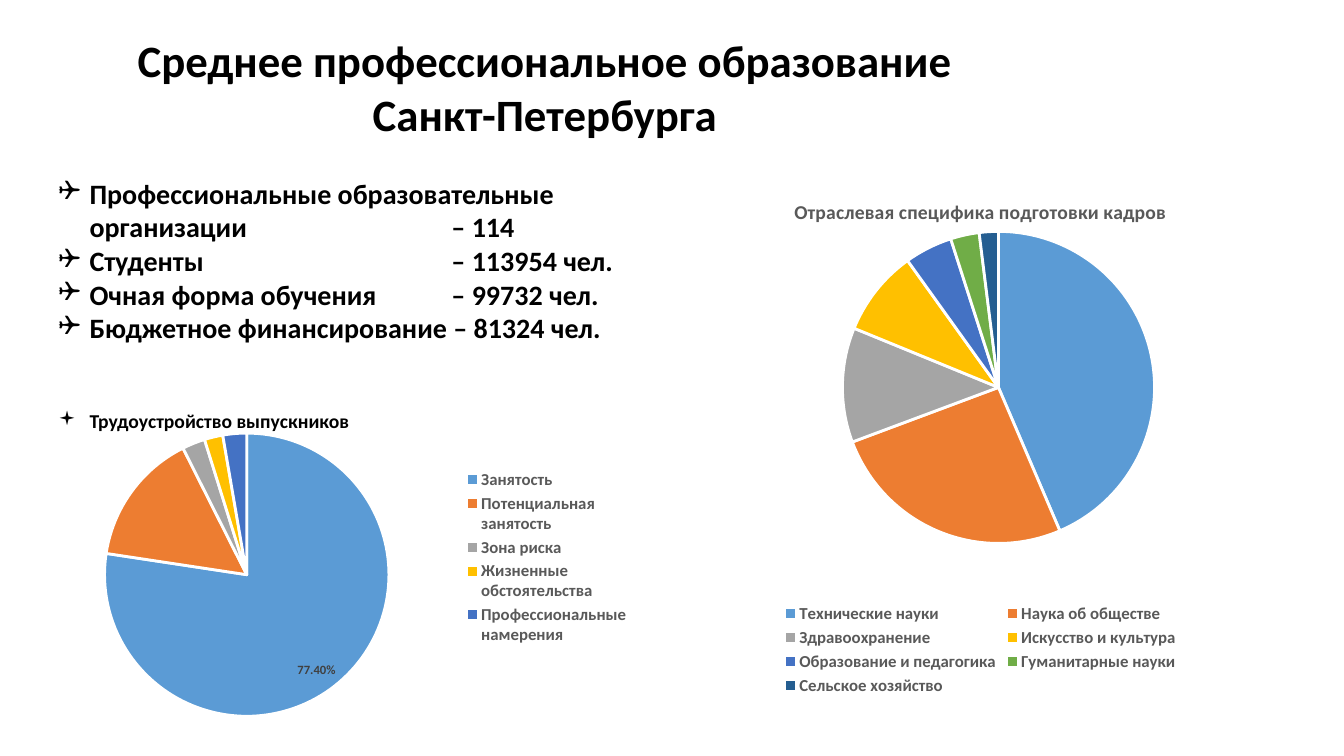
from lxml import etree
from pptx import Presentation
from pptx.chart.data import CategoryChartData
from pptx.dml.color import RGBColor
from pptx.enum.chart import XL_CHART_TYPE, XL_LABEL_POSITION, XL_LEGEND_POSITION
from pptx.enum.shapes import MSO_SHAPE
from pptx.enum.text import MSO_ANCHOR, PP_ALIGN
from pptx.oxml import parse_xml
from pptx.oxml.ns import nsdecls, qn
from pptx.util import Inches, Pt

PIE = XL_CHART_TYPE.PIE
BOTTOM, RIGHT = XL_LEGEND_POSITION.BOTTOM, XL_LEGEND_POSITION.RIGHT
INSIDE = XL_LABEL_POSITION.INSIDE_END
RECT = MSO_SHAPE.RECTANGLE
TOP, MIDDLE = MSO_ANCHOR.TOP, MSO_ANCHOR.MIDDLE
CENTER, JUSTIFY = PP_ALIGN.CENTER, PP_ALIGN.JUSTIFY

FONT = "Calibri"
COLORS = {
    "black": "000000", "white": "FFFFFF", "grey": "595959", "label": "404040",
    "blue": "5B9BD5", "orange": "ED7D31", "silver": "A5A5A5", "gold": "FFC000",
    "royal": "4472C4", "green": "70AD47", "navy": "255E91",
}
SLICES = ["blue", "orange", "silver", "gold", "royal", "green", "navy"]

TITLE = ["Среднее профессиональное образование", "Санкт-Петербурга"]
FACTS = [
    "Профессиональные образовательные организации\t– 114",
    "Студенты\t– 113954 чел.",
    "Очная форма обучения\t– 99732 чел.",
    "Бюджетное финансирование – 81324 чел.",
]
NOTE = "Трудоустройство выпускников"
FIELDS = [
    ("Технические науки", 44), ("Наука об обществе", 26),
    ("Здравоохранение", 12), ("Искусство и культура", 9),
    ("Образование и педагогика", 5), ("Гуманитарные науки", 3),
    ("Сельское хозяйство", 2),
]
JOBS = [
    ("Занятость", 0.774), ("Потенциальная занятость", 0.152),
    ("Зона риска", 0.026), ("Жизненные обстоятельства", 0.021),
    ("Профессиональные намерения", 0.027),
]


def color(name):
    """Return the named colour."""
    return RGBColor.from_string(COLORS[name])


def style(font, size, name):
    """Set a bold font with a size and colour."""
    font.name, font.size, font.bold = FONT, Pt(size), True
    font.color.rgb = color(name)


def add_run(para, text, size):
    """Add one black run to a paragraph."""
    run = para.add_run()
    run.text = text
    style(run.font, size, "black")


def next_para(frame, index):
    """Return the first paragraph or a new one."""
    return frame.add_paragraph() if index else frame.paragraphs[0]


def add_bullet(para, mark, tab):
    """Give a paragraph a hanging bullet and a tab stop."""
    props = para._p.get_or_add_pPr()
    props.set("marL", str(Inches(0.31)))
    props.set("indent", str(Inches(-0.31)))
    font = etree.SubElement(props, qn("a:buFont"))
    font.set("typeface", "Wingdings")
    char = etree.SubElement(props, qn("a:buChar"))
    char.set("char", mark)
    stops = etree.SubElement(props, qn("a:tabLst"))
    stop = etree.SubElement(stops, qn("a:tab"))
    stop.set("pos", str(Inches(tab)))
    stop.set("algn", "l")


def add_title(slide, box):
    """Draw the centred heading."""
    shape = slide.shapes.add_shape(RECT, *map(Inches, box))
    shape.shadow.inherit = False
    shape.fill.solid()
    shape.fill.fore_color.rgb = color("white")
    shape.line.fill.background()
    frame = shape.text_frame
    frame.word_wrap = True
    frame.vertical_anchor = MIDDLE
    for index, line in enumerate(TITLE):
        para = next_para(frame, index)
        para.alignment = CENTER
        add_run(para, line, 32)


def add_facts(slide, box):
    """Draw the bulleted figures and the caption below them."""
    frame = slide.shapes.add_textbox(*map(Inches, box)).text_frame
    frame.word_wrap = True
    frame.vertical_anchor = TOP
    frame.margin_top = Inches(0.46)
    for index, line in enumerate(FACTS):
        para = next_para(frame, index)
        add_bullet(para, "❑", 3.9)
        add_run(para, line, 20)
    para = frame.add_paragraph()
    add_bullet(para, "▪", 3.9)
    para.alignment = JUSTIFY
    para.space_before = Pt(46)
    add_run(para, NOTE, 14)


def set_plot(chart, area):
    """Fix the inner plot area as fractions of the chart."""
    parts = "".join(f'<c:{key} val="{val}"/>' for key, val in zip("xywh", area))
    layout = parse_xml(
        f'<c:layout {nsdecls("c")}><c:manualLayout><c:layoutTarget val="inner"/>'
        f'<c:xMode val="edge"/><c:yMode val="edge"/>{parts}'
        "</c:manualLayout></c:layout>")
    plot = chart._chartSpace.chart.plotArea
    for old in plot.findall(qn("c:layout")):
        plot.remove(old)
    plot.insert(0, layout)


def add_pie(slide, box, rows, area, place, form, title=None):
    """Draw a pie with its legend and return the chart."""
    data = CategoryChartData(number_format=form)
    data.categories = [name for name, _ in rows]
    data.add_series("Series 1", [val for _, val in rows])
    chart = slide.shapes.add_chart(PIE, *map(Inches, box), data).chart
    chart.font.name, chart.font.size = FONT, Pt(10)
    chart.font.color.rgb = color("black")
    chart.has_title = title is not None
    if title:
        run = chart.chart_title.text_frame.paragraphs[0].add_run()
        run.text = title
        style(run.font, 14, "grey")
    chart.has_legend = True
    chart.legend.position = place
    chart.legend.include_in_layout = False
    style(chart.legend.font, 12, "grey")
    plot = chart.plots[0]
    plot.vary_by_categories = True
    for index in range(len(rows)):
        part = plot.series[0].points[index].format
        part.fill.solid()
        part.fill.fore_color.rgb = color(SLICES[index])
        part.line.color.rgb = color("white")
        part.line.width = Pt(2)
    set_plot(chart, area)
    return chart


def add_jobs(slide, box):
    """Draw the employment pie with its one label."""
    chart = add_pie(slide, box, JOBS, (0.03, 0.11, 0.65, 0.89), RIGHT, "0.00%")
    label = chart.plots[0].series[0].points[0].data_label
    style(label.font, 9, "label")
    label.position = INSIDE
    mark = label._dLbl
    for tag in ("c:showLegendKey", "c:showCatName", "c:showSerName", "c:showPercent"):
        mark.find(qn(tag)).set("val", "0")
    mark.find(qn("c:showVal")).set("val", "1")


def main():
    """Build the slide and save it."""
    deck = Presentation()
    deck.slide_width, deck.slide_height = Inches(13.33), Inches(7.5)
    slide = deck.slides.add_slide(deck.slide_layouts[6])
    add_title(slide, (0.72, 0.25, 9.37, 1.22))
    add_pie(slide, (6.75, 1.78, 5.95, 5.16), FIELDS, (0.08, 0.1, 0.9, 0.6),
            BOTTOM, "General", "Отраслевая специфика подготовки кадров")
    add_facts(slide, (0.48, 1.29, 5.86, 3.1))
    add_jobs(slide, (0.3, 3.95, 6.05, 3.17))
    deck.save("out.pptx")


if __name__ == "__main__":
    main()
